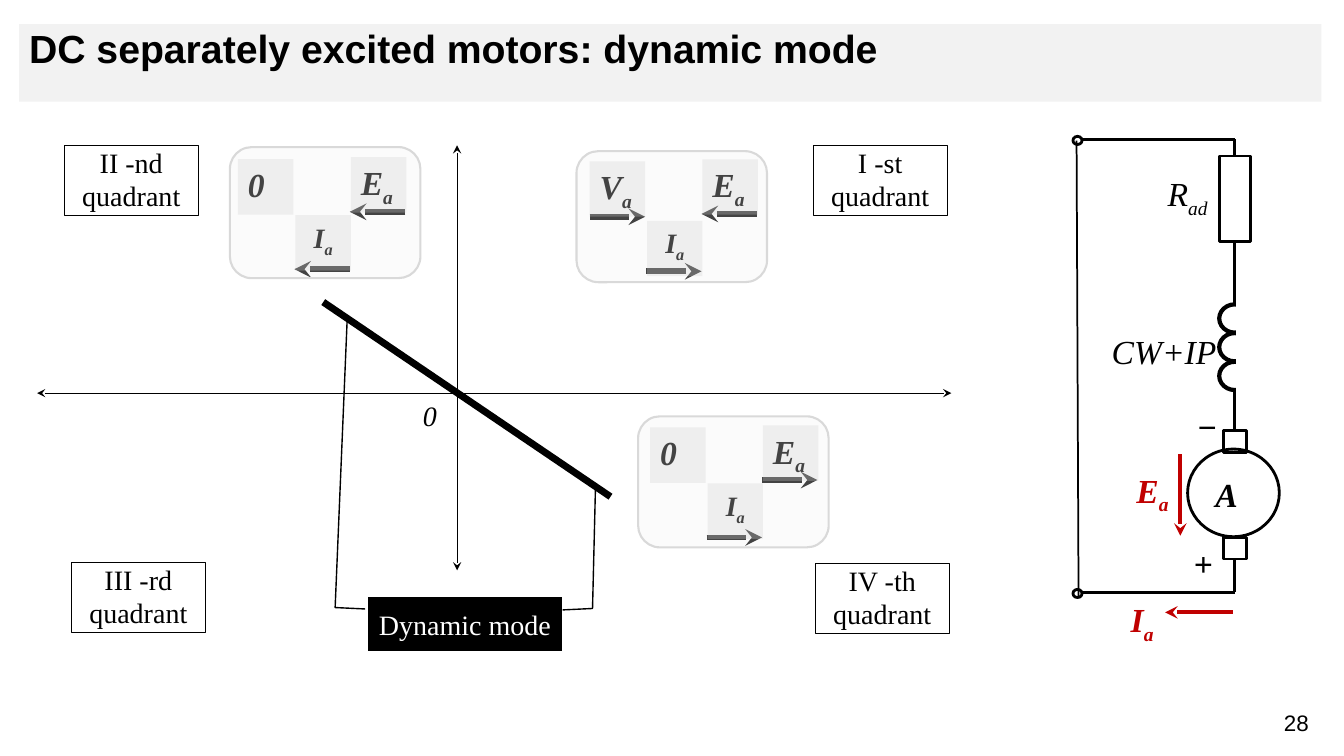
import pptx
import pptx.dml.color
import pptx.enum.shapes
import pptx.enum.text
import pptx.oxml.ns
import pptx.util
from lxml import etree

Pt = pptx.util.Pt
RGB = pptx.dml.color.RGBColor
SHAPE = pptx.enum.shapes.MSO_SHAPE
ALIGN = pptx.enum.text.PP_ALIGN
ANCHOR = pptx.enum.text.MSO_ANCHOR
qn = pptx.oxml.ns.qn

BLACK = RGB(0, 0, 0)
WHITE = RGB(0xFF, 0xFF, 0xFF)
RED = RGB(0xC0, 0, 0)
PALE = RGB(0xF2, 0xF2, 0xF2)
TILE_GREY = RGB(0xBF, 0xBF, 0xBF)
EDGE_GREY = RGB(0xD9, 0xD9, 0xD9)
SERIF = "Times New Roman"


def add_box(page, kind, left, top, width, height, fill=None, line=None,
            weight=2, opacity=None):
    box = page.shapes.add_shape(kind, Pt(left), Pt(top), Pt(width), Pt(height))
    box.shadow.inherit = False
    if fill is None:
        box.fill.background()
    else:
        box.fill.solid()
        box.fill.fore_color.rgb = fill
        if opacity:
            color = box._element.spPr.find(qn("a:solidFill"))[0]
            etree.SubElement(color, qn("a:alpha"), val=str(opacity * 1000))
    if line is None:
        box.line.fill.background()
    else:
        box.line.color.rgb = line
        box.line.width = Pt(weight)
    return box


def add_line(page, x1, y1, x2, y2, color=BLACK, weight=2, heads=()):
    """heads holds headEnd for an arrow at the start, tailEnd at the end."""
    line = page.shapes.add_connector(
        pptx.enum.shapes.MSO_CONNECTOR.STRAIGHT, Pt(x1), Pt(y1), Pt(x2), Pt(y2))
    line.line.color.rgb = color
    line.line.width = Pt(weight)
    for head in heads:
        etree.SubElement(line.line._get_or_add_ln(), qn("a:" + head), type="stealth")
    etree.SubElement(line._element.spPr, qn("a:effectLst"))
    return line


def write(box, text, size, color=BLACK, font=SERIF, bold=False, italic=False,
          align=ALIGN.LEFT, anchor=ANCHOR.TOP, sub="", spacing=None, insets=None):
    """Fills a box with text; sub is a subscript after the last line."""
    frame = box.text_frame
    frame.word_wrap = True
    frame.vertical_anchor = anchor
    if insets is not None:
        (frame.margin_left, frame.margin_top,
         frame.margin_right, frame.margin_bottom) = map(Pt, insets)
    frame.text = text
    if sub:
        span = frame.paragraphs[-1].add_run()
        span.text = sub
        span.font._element.set("baseline", "-25000")
    for para in frame.paragraphs:
        para.alignment = align
        para.line_spacing = spacing
        for span in para.runs:
            span.font.name = font
            span.font.size = Pt(size)
            span.font.bold = bold
            span.font.italic = italic
            span.font.color.rgb = color


def add_text(page, left, top, width, height, text, size, **style):
    box = page.shapes.add_textbox(Pt(left), Pt(top), Pt(width), Pt(height))
    write(box, text, size, **style)


def draw_title(page, left, top, width, height):
    bar = add_box(page, SHAPE.RECTANGLE, left, top, width, height, PALE)
    write(bar, "DC separately excited motors: dynamic mode", 28, font="Arial",
          bold=True, spacing=0.9)


def draw_quadrants(page, left, top, width, height):
    # Axes and the mechanical characteristic
    both = ("headEnd", "tailEnd")
    add_line(page, left + 300, top + height, left + 300, top, weight=0.75, heads=both)
    add_line(page, left, top + 177, left + width, top + 177, weight=0.75, heads=both)
    add_line(page, left + 204.4, top + 112, left + 409.6, top + 251, weight=5)
    add_text(page, left + 268.5, top + 177.5, 32.4, 38, "0", 20, italic=True)

    # Quadrant names
    for name, x, y in (("I -st", 554.3, 0), ("II -nd", 19.4, 0),
                       ("III -rd", 24.4, 297.8), ("IV -th", 555.8, 298.5)):
        box = add_box(page, SHAPE.RECTANGLE, left + x, top + y, 95.8, 50.4,
                      line=BLACK, weight=0.75)
        write(box, name + "\nquadrant", 20, align=ALIGN.CENTER, insets=(0, 0, 0, 0))

    # Callout with one leader to each end of the characteristic
    leaders = ((236.1, 323, BLACK, (0.215, -0.013, 0.188, -0.167, -5.281, -0.104)),
               (234.6, 323.7, None, (0.215, -0.013, 0.188, -0.167, -2.082, -0.182)))
    for x, y, fill, bends in leaders:
        callout = add_box(page, SHAPE.LINE_CALLOUT_2_NO_BORDER, left + x, top + y,
                          139, 38.2, fill, BLACK, 1)
        for index, bend in enumerate(bends):
            callout.adjustments[index] = bend
        if fill is None:
            callout._element.spPr.find(qn("a:xfrm")).set("flipH", "1")
        else:
            write(callout, "Dynamic mode", 20, color=WHITE, align=ALIGN.CENTER,
                  anchor=ANCHOR.MIDDLE)


def draw_circuit(page, left, top):
    axis, bottom = left + 116, top + 323.6

    # Choke: three loops with their right halves masked
    for turn in range(3):
        add_box(page, SHAPE.OVAL, axis - 11.1, top + 118 + 20.5 * turn, 22.3, 20.2,
                WHITE, BLACK, 3)
    add_box(page, SHAPE.RECTANGLE, axis + 1, top + 76, 33, 123, WHITE)

    # Labels
    for text, sub, x, y, width, height, color, bold in (
            ("R", "ad", 60.9, 15.8, 49.7, 61.9, BLACK, False),
            ("CW+IP", "", 21, 129.2, 89.3, 37.4, BLACK, False),
            ("I", "a", 34.6, 320, 47.5, 46, RED, True),
            ("−", "", 81.8, 182.9, 33.8, 46, BLACK, True),
            ("+", "", 79.6, 280.4, 33.8, 46, BLACK, True),
            ("Е", "a", 38.6, 227.5, 50.4, 61.2, RED, True),
            ("A", "", 95.1, 231.5, 40.3, 46, BLACK, True)):
        add_text(page, left + x, top + y, width, height, text, 24, color=color,
                 bold=bold, italic=True, sub=sub, spacing=1.15,
                 insets=(7.2, 3.6, 0, 0.7))

    # Resistor, brushes and armature
    resistor = add_box(page, SHAPE.RECTANGLE, axis - 11.1, top + 12, 22.2, 61, line=BLACK)
    upper_brush = add_box(page, SHAPE.RECTANGLE, axis - 8.3, top + 208, 16.6, 16,
                          line=BLACK)
    add_box(page, SHAPE.OVAL, axis - 33.7, top + 221.4, 65.5, 62.6, line=BLACK)
    lower_brush = add_box(page, SHAPE.RECTANGLE, axis - 8.3, top + 284.8, 16.6, 15.1,
                          WHITE, BLACK)

    # Wires along the axis
    for start, end, part, site in ((0, 12, resistor, 0), (118, 73, resistor, 2),
                                   (179, 208, upper_brush, 0),
                                   (323.6, 299.9, lower_brush, 2)):
        wire = add_line(page, axis, top + start, axis, top + end)
        wire.end_connect(part, site)

    # Supply terminals and return wire
    for y in (top, bottom):
        add_box(page, SHAPE.OVAL, left + 0.4, y - 2, 6.5, 5.8, line=BLACK)
        add_line(page, axis, y, left + 6.6, y)
    add_line(page, left + 3, top + 1, left + 4.4, top + 326.5, weight=1.25)

    # EMF and current arrows
    add_line(page, left + 77.1, top + 225, left + 77.1, top + 283.3, RED, 3, ["tailEnd"])
    add_line(page, left + 114.6, top + 338, left + 66.3, top + 338, RED, 3, ["tailEnd"])


def draw_mode_panel(page, left, top, pad_x, pad_y, source, current_y, arrows):
    """arrows lists x, y and direction, measured from the first tile."""
    x, y, tile = left + pad_x, top + pad_y, 39.6
    for dx, dy, direction in arrows:
        ends = (x + dx, x + dx + tile)[::direction]
        add_line(page, ends[0], y + dy, ends[1], y + dy, BLACK, 4, ["tailEnd"])
    for text, sub, dx, dy, size, align, inset in (
            ("Е", "a", 80.6, -1.4, 24, ALIGN.LEFT, 7.2),
            (source, "" if source == "0" else "a", 0, 0, 24, ALIGN.LEFT, 7.2),
            ("I", "a", 41, current_y, 20, ALIGN.CENTER, 0)):
        box = add_box(page, SHAPE.RECTANGLE, x + dx, y + dy, tile, tile,
                      TILE_GREY, opacity=28)
        write(box, text, size, bold=True, italic=True, sub=sub, align=align,
              insets=(inset, 3.6, 0, 3.6))
    add_box(page, SHAPE.ROUNDED_RECTANGLE, left, top, 136.1, 93.6, PALE,
            EDGE_GREY, 1.5, opacity=28)


def main():
    deck = pptx.Presentation()
    deck.slide_width, deck.slide_height = Pt(960), Pt(540)
    page = deck.slides.add_slide(deck.slide_layouts[6])

    add_text(page, 902.9, 503.3, 46, 26.6, "28", 16, font="Arial", align=ALIGN.CENTER)
    draw_title(page, 13.7, 17.3, 930.2, 55.4)
    draw_quadrants(page, 26.5, 103.8, 653, 303.6)
    draw_circuit(page, 766, 99.4)

    # Voltage, EMF and current directions: 1 points right, -1 left
    emf, current, supply = (79.9, 37.6), (40.3, 78.6), (0, 39.6)
    draw_mode_panel(page, 164.2, 105.1, 5.8, 8.6, "0", 40,
                    [(*emf, -1), (*current, -1)])
    draw_mode_panel(page, 455.8, 297.4, 8.6, 7.9, "0", 40,
                    [(*emf, 1), (*current, 1)])
    draw_mode_panel(page, 411.8, 108, 9.4, 7.2, "V", 42.5,
                    [(*emf, -1), (*supply, 1), (*current, 1)])
    deck.save("out.pptx")


if __name__ == "__main__":
    main()
